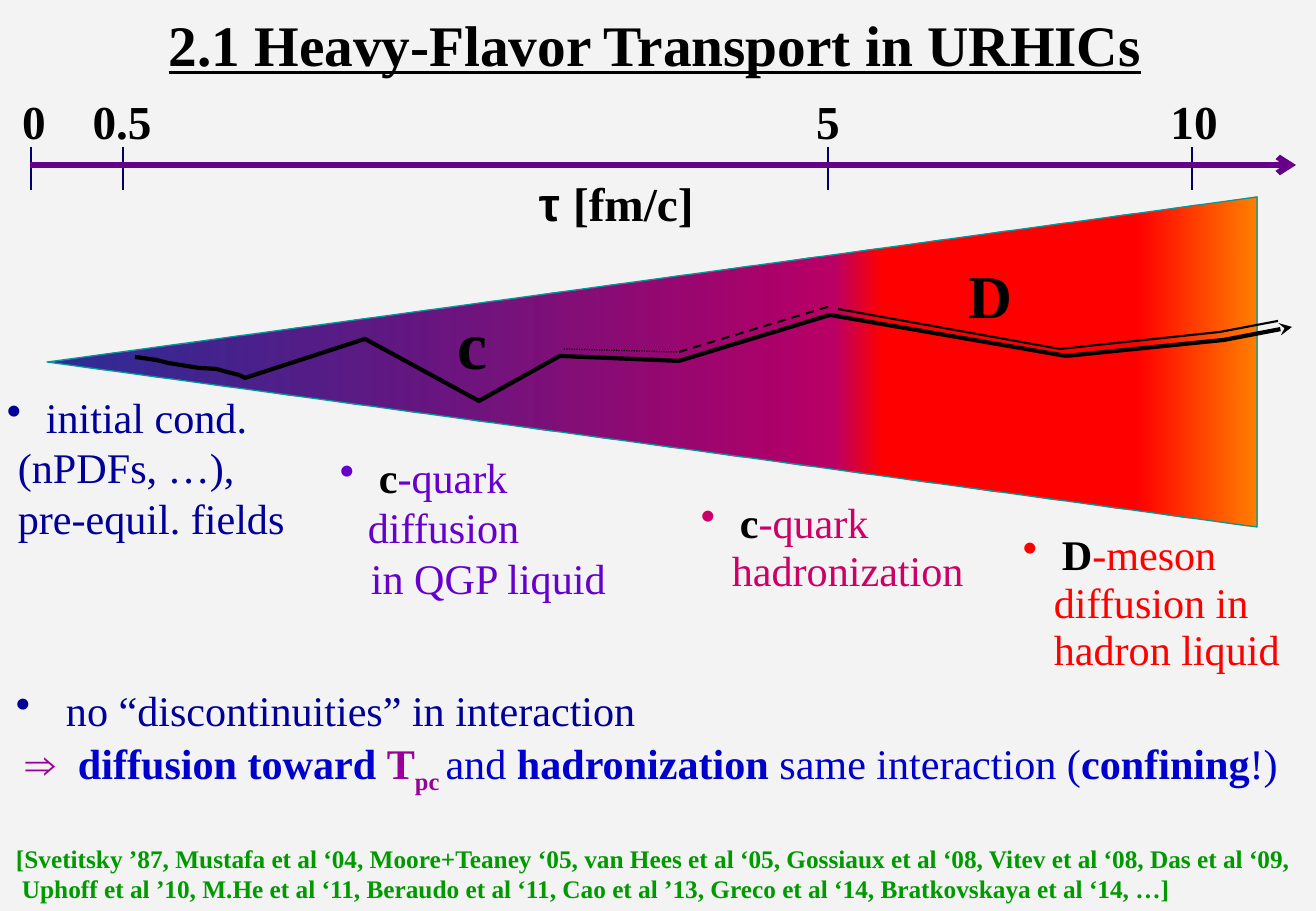
from typing import NamedTuple

from lxml.etree import SubElement
from pptx import Presentation
from pptx.dml.color import RGBColor
from pptx.enum.dml import MSO_LINE
from pptx.enum.shapes import MSO_CONNECTOR, MSO_SHAPE
from pptx.enum.text import MSO_ANCHOR, PP_ALIGN
from pptx.oxml.ns import qn
from pptx.util import Pt

SCALE = 914400 / 121.5  # EMU in one px


class Theme:
    background, black = "F3F3F3", "010000"
    navy, blue, violet = "000099", "0000CC", "6600CC"
    magenta, red, purple, green = "CC0066", "FF0000", "990099", "009900"
    tick, axis, edge = "000066", "660088", "009999"
    serif, sans = "Times New Roman", "Arial"
    title, scale, body, citation, charm, meson = 34, 28, 25, 15, 40, 36
    bullet_hang = 39


class Run(NamedTuple):
    text: str
    color: str = Theme.black
    bold: bool = False
    font: str = Theme.serif
    subscript: bool = False


class Line(NamedTuple):
    runs: list
    left: int = 0
    hang: int = 0
    bullet: str = ""  # bullet colour
    before: int = 0


def bulleted(runs, color, left=Theme.bullet_hang):
    return Line(runs, left, left, color)


def label(text):
    return [Line([Run(text, bold=True)])]


# Content
TITLE = "2.1 Heavy-Flavor Transport in URHICs"
TICKS = [("0", 31, 34), ("0.5", 123, 122), ("5", 828, 828), ("10", 1192, 1194)]
AXIS_Y, TICK_TOP, TICK_BOTTOM = 165, 147, 190
FIREBALL_STOPS = [(0, "000082", 81), (65, "BA0066", 100), (69, "FF0000", 100),
                  (90, "FF0000", 100), (100, "FF8200", 100)]
QUARK_PATH = [(135, 357), (156, 360), (168, 363), (199, 368), (216, 369), (227, 372),
              (239, 375), (245, 378), (365, 339), (479, 401), (560, 356), (679, 361),
              (830, 315), (1066, 356), (1224, 340), (1292, 327)]
MESON_PATH = [(838, 309), (1060, 349), (1220, 332), (1278, 321)]

# Text boxes: (left, top, width, height), size, line spacing, lines
TEXTS = [
    ((-5, 385, 330, 165), Theme.body, 30, [
        bulleted([Run("initial cond.", Theme.navy)], Theme.navy),
        Line([Run("(nPDFs, …),", Theme.navy)], 11),
        Line([Run("pre-equil. fields", Theme.navy)], 11)]),
    ((328, 445, 345, 165), Theme.body, 30, [
        bulleted([Run("c", bold=True), Run("-quark", Theme.violet)], Theme.violet),
        Line([Run("diffusion", Theme.violet)], 28),
        Line([Run("in QGP liquid", Theme.violet)], 31)]),
    ((689, 494, 300, 108), Theme.body, 28, [
        bulleted([Run("c", bold=True), Run("-quark", Theme.magenta)], Theme.magenta),
        Line([Run("hadronization", Theme.magenta)], 31)]),
    ((1011, 526, 300, 160), Theme.body, 28, [
        bulleted([Run("D", bold=True), Run("-meson", Theme.red)], Theme.red),
        Line([Run("diffusion in", Theme.red)], 31),
        Line([Run("hadron liquid", Theme.red)], 31)]),
    ((4, 678, 1318, 125), Theme.body, 30, [
        bulleted([Run("no “discontinuities” in interaction", Theme.navy)], Theme.navy, 50),
        Line([Run("⇒\t", Theme.purple, True),
              Run("diffusion toward ", Theme.blue, True),
              Run("T", Theme.purple, True),
              Run("pc ", Theme.purple, True, subscript=True),
              Run("and ", Theme.blue),
              Run("hadronization", Theme.blue, True),
              Run(" same interaction (", Theme.blue),
              Run("confining", Theme.blue, True),
              Run("!)", Theme.blue)], 62, 52, before=6)]),
    ((446, 330, 56, 64), Theme.charm, 28, label("c")),
    ((957, 277, 70, 62), Theme.meson, 28, label("D")),
    ((527, 168, 200, 69), Theme.scale, 34, [
        Line([Run("τ ", bold=True, font=Theme.sans), Run("[fm/c]", bold=True)])]),
    ((4, 837, 1312, 74), Theme.citation, 18, [
        Line([Run("[Svetitsky ’87, Mustafa et al ‘04, Moore+Teaney ‘05, van Hees et al ‘05, "
                  "Gossiaux et al ‘08, Vitev et al ‘08, Das et al ‘09,", Theme.green, True)]),
        Line([Run("Uphoff et al ’10, M.He et al ‘11, Beraudo et al ‘11, Cao et al ’13, "
                  "Greco et al ‘14, Bratkovskaya et al ‘14, …]", Theme.green, True)], 6)]),
]


def px(*values):
    return [round(value * SCALE) for value in values]


def rgb(color):
    return RGBColor.from_string(color)


def add_run(paragraph, item, size):
    run = paragraph.add_run()
    run.text = item.text
    run.font.name, run.font.size, run.font.bold = item.font, Pt(size), item.bold
    run.font.color.rgb = rgb(item.color)
    if item.subscript:
        run.font._element.set("baseline", "-25000")
    return run


def add_text(slide, box, size, spacing, lines, align=PP_ALIGN.LEFT):
    frame = slide.shapes.add_textbox(*px(*box)).text_frame
    frame.word_wrap = True
    for index, line in enumerate(lines):
        paragraph = frame.paragraphs[0] if index == 0 else frame.add_paragraph()
        properties = paragraph._p.get_or_add_pPr()
        left, hang = px(line.left, line.hang)
        properties.set("marL", str(left))
        properties.set("indent", str(-hang))
        if line.bullet:
            color = SubElement(properties, qn("a:buClr"))
            SubElement(color, qn("a:srgbClr"), val=line.bullet)
            SubElement(properties, qn("a:buChar"), char="•")
        paragraph.alignment = align
        paragraph.line_spacing = Pt(spacing)
        if line.before:
            paragraph.space_before = Pt(line.before)
        for item in line.runs:
            add_run(paragraph, item, size)


def style_line(shape, color, width, head=None, dash=None):
    shape.line.color.rgb = rgb(color)
    shape.line.width = Pt(width)
    if dash:
        shape.line.dash_style = dash
    if head:
        SubElement(shape.line._get_or_add_ln(), qn("a:tailEnd"), type=head)


def add_line(slide, start, end, color, width, head=None, dash=None):
    connector = slide.shapes.add_connector(MSO_CONNECTOR.STRAIGHT, *px(*start, *end))
    style_line(connector, color, width, head, dash)
    SubElement(connector._element.spPr, qn("a:effectLst"))


def add_path(slide, points, width, head=None):
    builder = slide.shapes.build_freeform(*points[0], scale=SCALE)
    builder.add_line_segments(points[1:], close=False)
    shape = builder.convert_to_shape()
    shape.fill.background()
    shape.shadow.inherit = False
    style_line(shape, Theme.black, width, head)


def add_fireball(slide):
    shape = slide.shapes.add_shape(MSO_SHAPE.ISOSCELES_TRIANGLE, *px(487, -243, 330, 1210))
    shape.rotation = 270
    shape.shadow.inherit = False
    shape.fill.gradient()
    shape.fill.gradient_angle = 270
    stops = shape._element.spPr.find(qn("a:gradFill")).find(qn("a:gsLst"))
    for stop in list(stops):
        stops.remove(stop)
    for position, color, opacity in FIREBALL_STOPS:
        stop = SubElement(stops, qn("a:gs"), pos=str(position * 1000))
        value = SubElement(stop, qn("a:srgbClr"), val=color)
        if opacity < 100:
            SubElement(value, qn("a:alpha"), val=str(opacity * 1000))
    style_line(shape, Theme.edge, 0.75)


def add_title(slide):
    title = slide.shapes.title
    title.left, title.top, title.width, title.height = px(-9, -5, 1328, 97)
    title.text_frame.vertical_anchor = MSO_ANCHOR.MIDDLE
    paragraph = title.text_frame.paragraphs[0]
    paragraph.alignment = PP_ALIGN.CENTER
    add_run(paragraph, Run(TITLE, bold=True), Theme.title).font.underline = True


def main():
    presentation = Presentation()
    presentation.slide_width, presentation.slide_height = px(1316, 911)
    slide = presentation.slides.add_slide(presentation.slide_layouts[5])
    slide.background.fill.solid()
    slide.background.fill.fore_color.rgb = rgb(Theme.background)
    add_title(slide)

    # Expanding fireball with the heavy-quark track
    add_fireball(slide)
    add_path(slide, QUARK_PATH, 2.5, "stealth")
    add_path(slide, MESON_PATH, 1.25)
    add_line(slide, (679, 352), (834, 305), Theme.black, 1.25, dash=MSO_LINE.DASH)
    add_line(slide, (564, 349), (677, 352), Theme.black, 0.75, dash=MSO_LINE.ROUND_DOT)

    # Time axis
    for text, tick, center in TICKS:
        add_line(slide, (tick, TICK_TOP), (tick, TICK_BOTTOM), Theme.tick, 1.25)
        add_text(slide, (center - 50, 86, 100, 69), Theme.scale, 34, label(text),
                 PP_ALIGN.CENTER)
    add_line(slide, (30, AXIS_Y), (1296, AXIS_Y), Theme.axis, 3.5, "arrow")

    # Stage notes, conclusions and citations
    for box, size, spacing, lines in TEXTS:
        add_text(slide, box, size, spacing, lines)
    presentation.save("out.pptx")


if __name__ == "__main__":
    main()
